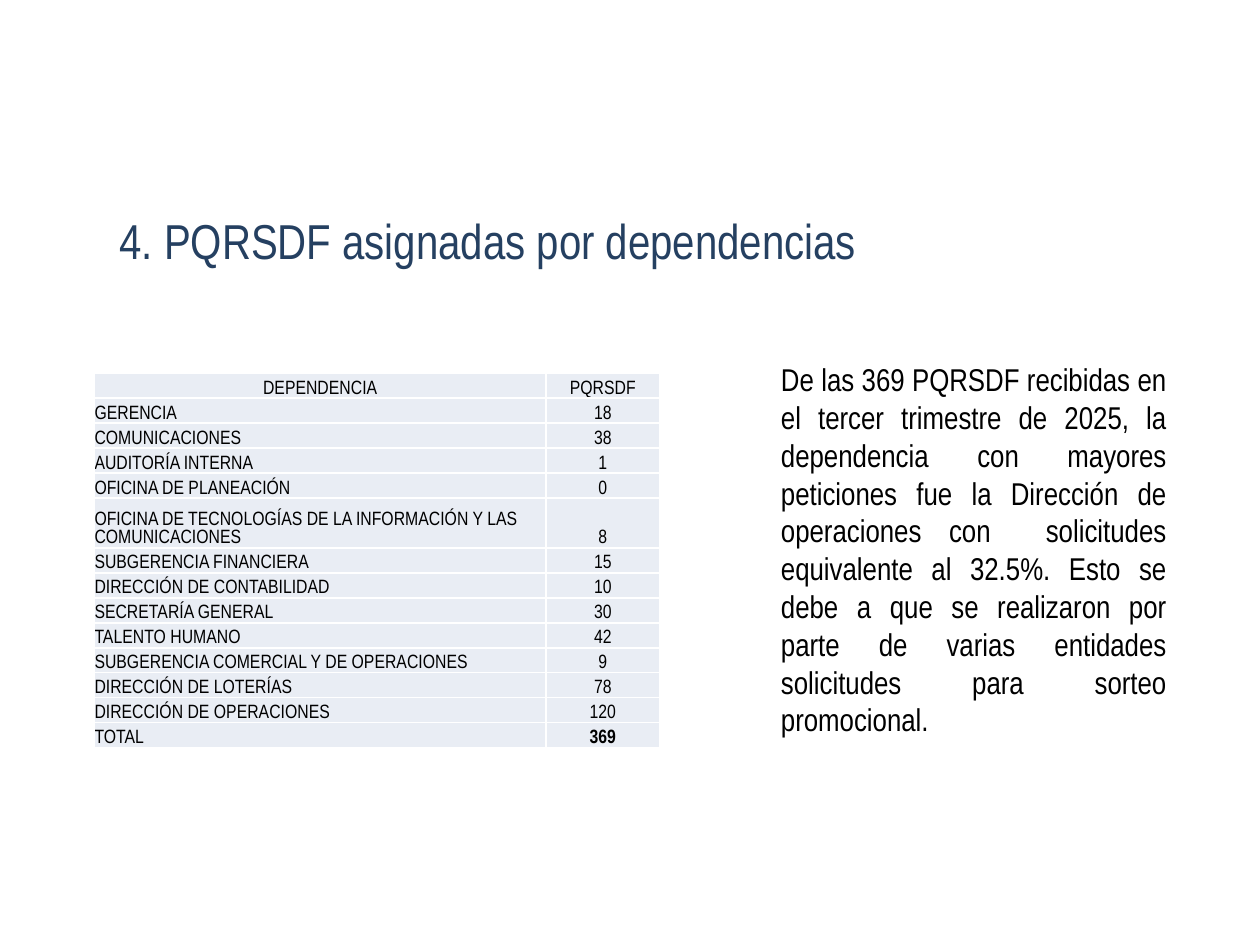
import lxml.etree
import pptx
import pptx.dml.color
import pptx.enum.text
import pptx.oxml.ns
import pptx.util

Pt = pptx.util.Pt
ALIGN = pptx.enum.text.PP_ALIGN
NAVY = pptx.dml.color.RGBColor(0x25, 0x40, 0x61)
BLACK = pptx.dml.color.RGBColor(0, 0, 0)
WHITE = pptx.dml.color.RGBColor(0xFF, 0xFF, 0xFF)
PALE_BLUE = pptx.dml.color.RGBColor(0xE9, 0xED, 0xF4)
FONT = "Arial Narrow"
ROW_HEIGHT = 14.26

TITLE = "4. PQRSDF asignadas por dependencias"
COMMENTARY = (
    "De las 369 PQRSDF recibidas en el tercer trimestre de 2025, la dependencia "
    "con mayores peticiones fue la Dirección de operaciones con  solicitudes "
    "equivalente al 32.5%. Esto se debe a que se realizaron por parte de varias "
    "entidades solicitudes para sorteo promocional."
)
LONG_NAME = "OFICINA DE TECNOLOGÍAS DE LA INFORMACIÓN Y LAS COMUNICACIONES"
ROWS = [
    ("DEPENDENCIA", "PQRSDF"),
    ("GERENCIA", "18"),
    ("COMUNICACIONES", "38"),
    ("AUDITORÍA INTERNA", "1"),
    ("OFICINA DE PLANEACIÓN", "0"),
    (LONG_NAME, "8"),
    ("SUBGERENCIA FINANCIERA", "15"),
    ("DIRECCIÓN DE CONTABILIDAD", "10"),
    ("SECRETARÍA GENERAL", "30"),
    ("TALENTO HUMANO", "42"),
    ("SUBGERENCIA COMERCIAL Y DE OPERACIONES", "9"),
    ("DIRECCIÓN DE LOTERÍAS", "78"),
    ("DIRECCIÓN DE OPERACIONES", "120"),
    ("TOTAL", "369"),
]


def write_text(text_frame, text, size, color, alignment):
    """Write one formatted paragraph and return it."""
    text_frame.text = text
    paragraph = text_frame.paragraphs[0]
    paragraph.alignment = alignment
    font = paragraph.runs[0].font
    font.name, font.size, font.bold = FONT, Pt(size), False
    font.color.rgb = color
    return paragraph


def add_text(slide, bounds, text, size, color, alignment):
    """Add a wrapping text box and return its paragraph."""
    shape = slide.shapes.add_textbox(*map(Pt, bounds))
    shape.text_frame.word_wrap = True
    return write_text(shape.text_frame, text, size, color, alignment)


def set_borders(cell):
    """Give all four sides of a cell a thin white line."""
    properties = cell._tc.get_or_add_tcPr()
    qn = pptx.oxml.ns.qn
    for index, side in enumerate(("a:lnL", "a:lnR", "a:lnT", "a:lnB")):
        line = lxml.etree.Element(qn(side), w=str(Pt(1)))
        fill = lxml.etree.SubElement(line, qn("a:solidFill"))
        lxml.etree.SubElement(fill, qn("a:srgbClr"), val=str(WHITE))
        properties.insert(index, line)


def format_cell(cell, text, alignment):
    """Fill a table cell and return its paragraph."""
    cell.margin_left = cell.margin_right = cell.margin_top = cell.margin_bottom = 0
    cell.vertical_anchor = pptx.enum.text.MSO_ANCHOR.BOTTOM
    cell.fill.solid()
    cell.fill.fore_color.rgb = PALE_BLUE
    set_borders(cell)
    return write_text(cell.text_frame, text, 11, BLACK, alignment)


def add_department_table(slide):
    """Add the table of requests by department."""
    height = ROW_HEIGHT * (len(ROWS) + 1)
    table = slide.shapes.add_table(
        len(ROWS), 2, Pt(54), Pt(213.3), Pt(323), Pt(height)
    ).table
    table.first_row = table.horz_banding = False
    table.columns[0].width = Pt(258)
    table.columns[1].width = Pt(65)
    for index, (department, count) in enumerate(ROWS):
        line_count = 2 if department == LONG_NAME else 1
        table.rows[index].height = Pt(ROW_HEIGHT * line_count)
        alignment = ALIGN.LEFT if index else ALIGN.CENTER
        format_cell(table.cell(index, 0), department, alignment)
        number = format_cell(table.cell(index, 1), count, ALIGN.CENTER)
        number.runs[0].font.bold = department == "TOTAL"


def main():
    """Build and save the slide."""
    presentation = pptx.Presentation()
    presentation.slide_width, presentation.slide_height = Pt(720), Pt(540)
    slide = presentation.slides.add_slide(presentation.slide_layouts[6])
    title = add_text(slide, (25.2, 100, 500.4, 52), TITLE, 28, NAVY, ALIGN.LEFT)
    title.level = 1
    title.line_spacing = 1.5
    title._p.get_or_add_pPr().set("marL", str(Pt(36)))
    title._p.get_or_add_pPr().set("indent", "0")
    add_text(slide, (439.2, 202.3, 234.6, 225.4), COMMENTARY, 18, BLACK, ALIGN.JUSTIFY)
    add_department_table(slide)
    presentation.save("out.pptx")


if __name__ == "__main__":
    main()
